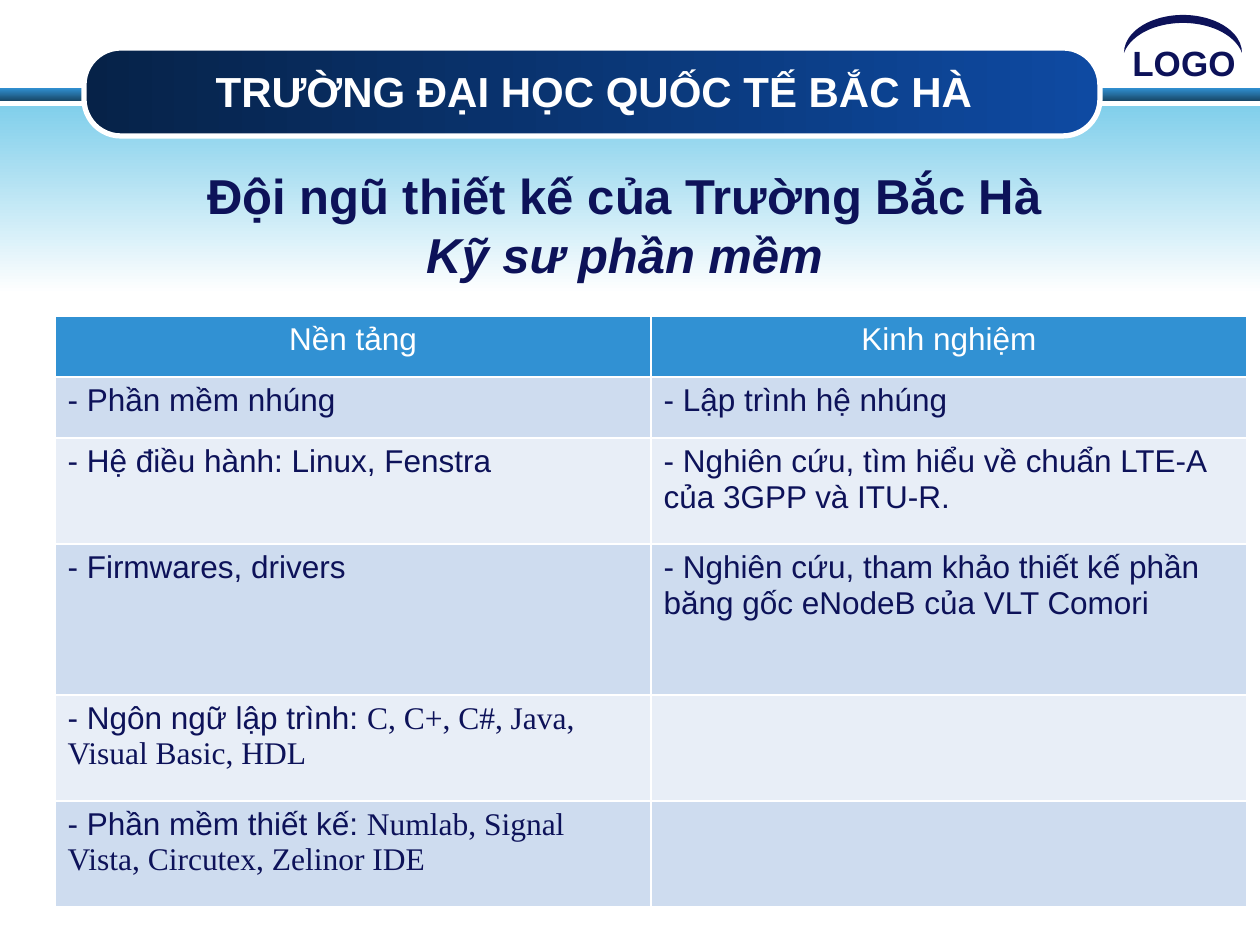
from dataclasses import dataclass
from typing import NamedTuple

from lxml.etree import SubElement
from pptx import Presentation
from pptx.dml.color import RGBColor
from pptx.enum.shapes import MSO_SHAPE as Shape
from pptx.enum.text import MSO_ANCHOR as Anchor, MSO_AUTO_SIZE as AutoSize, PP_ALIGN as Align
from pptx.oxml.ns import qn
from pptx.util import Emu, Pt

PX = 914400 / 126


@dataclass(frozen=True)
class Theme:
    navy: str = "0D1259"
    white: str = "FFFFFF"
    blue: str = "3191D3"
    bar_end: str = "184868"
    sky: str = "81CFEB"
    pill_start: str = "062248"
    pill_end: str = "0E4AA2"
    bands: tuple[str, str] = ("CEDCEF", "E8EEF7")
    sans: str = "Arial"
    serif: str = "Times New Roman"
    logo_size: int = 20
    title_size: int = 24
    subtitle_size: int = 28
    table_size: int = 18


T = Theme()


class Box(NamedTuple):
    x: int
    y: int
    w: int
    h: int

    def emu(self) -> list[Emu]:
        return [px(v) for v in self]


@dataclass(frozen=True)
class Panel:
    kind: Shape
    box: Box
    start: str
    end: str
    angle: int


class Span(NamedTuple):
    text: str
    font: str = T.sans


SKY_BAR = Panel(Shape.RECTANGLE, Box(0, 88, 1260, 13), T.blue, T.bar_end, 270)
SKY_FADE = Panel(Shape.RECTANGLE, Box(0, 106, 1260, 188), T.sky, T.white, 270)
TITLE_PILL = Panel(Shape.ROUNDED_RECTANGLE, Box(84, 48, 1016, 88), T.pill_start, T.pill_end, 0)

HEADERS = ("Nền tảng", "Kinh nghiệm")
ROWS = [
    ([Span("- Phần mềm nhúng")], [Span("- Lập trình hệ nhúng")]),
    ([Span("- Hệ điều hành: Linux, Fenstra")],
     [Span("- Nghiên cứu, tìm hiểu về chuẩn LTE-A của 3GPP và ITU-R.")]),
    ([Span("- Firmwares, drivers")],
     [Span("- Nghiên cứu, tham khảo thiết kế phần băng gốc eNodeB của VLT Comori")]),
    ([Span("- Ngôn ngữ lập trình: "), Span("C, C+, C#, Java, Visual Basic, HDL", T.serif)], []),
    ([Span("- Phần mềm thiết kế: "), Span("Numlab, Signal Vista, Circutex, Zelinor IDE", T.serif)], []),
]
ROW_HEIGHTS = (61, 61, 106, 151, 106, 106)
COL_WIDTH = 596


def px(n: int) -> Emu:
    return Emu(round(n * PX))


def rgb(color: str) -> RGBColor:
    return RGBColor.from_string(color)


def add_run(p, text: str, size: int, color: str, font: str = T.sans,
            bold: bool = False, italic: bool = False) -> None:
    r = p.add_run()
    r.text = text
    r.font.name, r.font.size = font, Pt(size)
    r.font.bold, r.font.italic = bold, italic
    r.font.color.rgb = rgb(color)


def add_panel(slide, panel: Panel):
    sp = slide.shapes.add_shape(panel.kind, *panel.box.emu())
    sp.shadow.inherit = False
    sp.line.fill.background()
    sp.fill.gradient()
    sp.fill.gradient_angle = panel.angle
    for stop, color in zip(sp.fill.gradient_stops, (panel.start, panel.end)):
        stop.color.rgb = rgb(color)
    return sp


def add_text_box(slide, box: Box, align: Align):
    tf = slide.shapes.add_textbox(*box.emu()).text_frame
    tf.word_wrap = True
    p = tf.paragraphs[0]
    p.alignment = align
    return p


def add_logo(slide) -> None:
    p = add_text_box(slide, Box(1120, 35, 136, 54), Align.LEFT)
    add_run(p, "LOGO", T.logo_size, T.navy, bold=True)
    arc = slide.shapes.add_shape(Shape.MOON, *Box(1164, -25, 38, 118).emu())
    arc.rotation = 90
    arc.adjustments[0] = 0.21
    arc.shadow.inherit = False
    arc.fill.solid()
    arc.fill.fore_color.rgb = rgb(T.navy)
    arc.line.fill.background()


def place_title(slide, text: str, box: Box) -> None:
    title = slide.shapes.title
    title.left, title.top, title.width, title.height = box.emu()
    slide.shapes.element.append(title.element)
    tf = title.text_frame
    tf.auto_size = AutoSize.NONE
    tf.vertical_anchor = Anchor.MIDDLE
    p = tf.paragraphs[0]
    p.alignment = Align.CENTER
    add_run(p, text, T.title_size, T.white, bold=True)


def style_cell(cell, fill: str) -> None:
    tc_pr = cell._tc.get_or_add_tcPr()
    for side in ("a:lnL", "a:lnR", "a:lnT", "a:lnB"):
        ln = SubElement(tc_pr, qn(side), w=str(Pt(1)))
        SubElement(SubElement(ln, qn("a:solidFill")), qn("a:srgbClr"), val=T.white)
    cell.fill.solid()
    cell.fill.fore_color.rgb = rgb(fill)


def add_skills_table(slide) -> None:
    box = Box(55, 316, COL_WIDTH * len(HEADERS), sum(ROW_HEIGHTS))
    table = slide.shapes.add_table(len(ROW_HEIGHTS), len(HEADERS), *box.emu()).table
    for col in table.columns:
        col.width = px(COL_WIDTH)
    for row, height in zip(table.rows, ROW_HEIGHTS):
        row.height = px(height)
    for c, text in enumerate(HEADERS):
        cell = table.cell(0, c)
        style_cell(cell, T.blue)
        p = cell.text_frame.paragraphs[0]
        p.alignment = Align.CENTER
        add_run(p, text, T.table_size, T.white)
    for i, row in enumerate(ROWS):
        for c, spans in enumerate(row):
            cell = table.cell(i + 1, c)
            style_cell(cell, T.bands[i % 2])
            for span in spans:
                add_run(cell.text_frame.paragraphs[0], span.text, T.table_size, T.navy, span.font)


def main() -> None:
    prs = Presentation()
    prs.slide_width, prs.slide_height = px(1260), px(945)
    slide = prs.slides.add_slide(prs.slide_layouts[5])

    add_panel(slide, SKY_BAR)
    add_panel(slide, SKY_FADE)
    pill = add_panel(slide, TITLE_PILL)
    pill.adjustments[0] = 0.42
    pill.line.color.rgb = rgb(T.white)
    pill.line.width = Pt(3)
    add_logo(slide)
    place_title(slide, "TRƯỜNG ĐẠI HỌC QUỐC TẾ BẮC HÀ", Box(76, 52, 1036, 78))

    p = add_text_box(slide, Box(76, 159, 1097, 131), Align.CENTER)
    add_run(p, "Đội ngũ thiết kế của Trường Bắc Hà", T.subtitle_size, T.navy, bold=True)
    p.add_line_break()
    add_run(p, "Kỹ sư phần mềm", T.subtitle_size, T.navy, bold=True, italic=True)

    add_skills_table(slide)
    prs.save("out.pptx")


if __name__ == "__main__":
    main()
